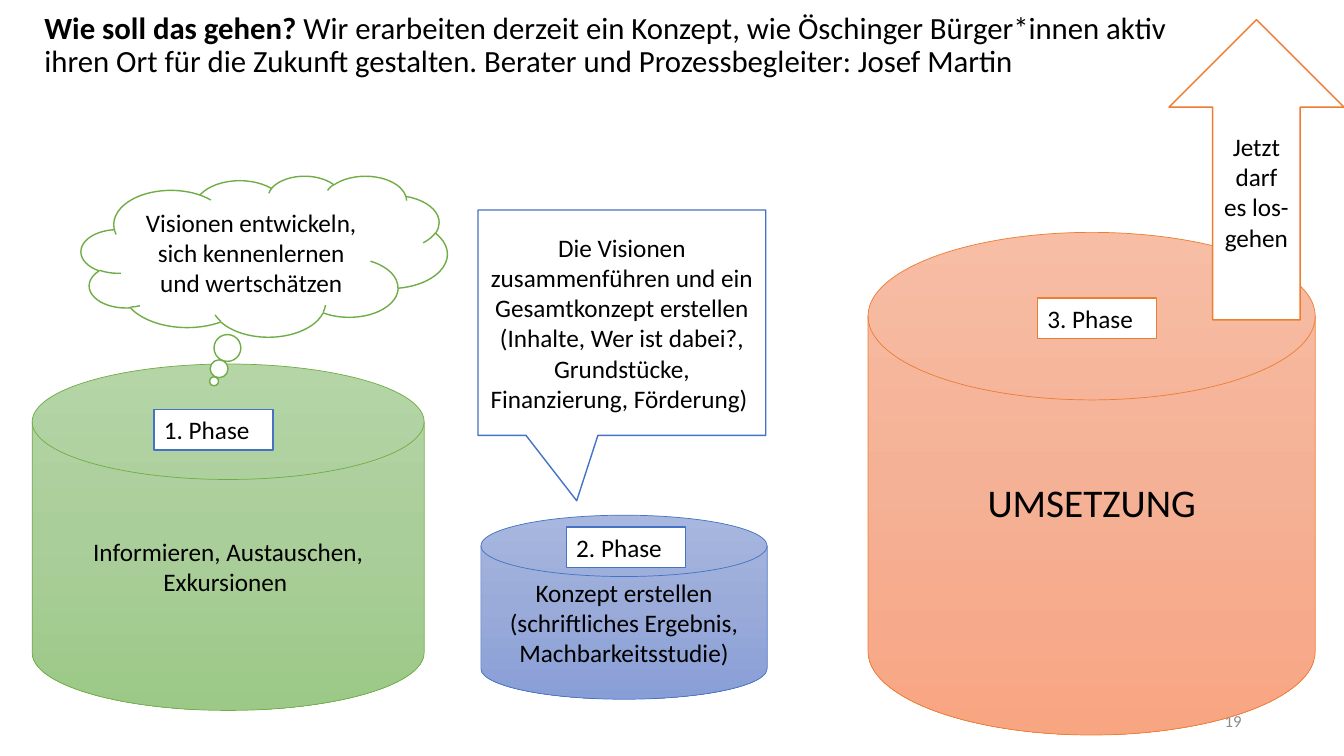
"""Build the slide showing the three phases of the village concept."""
from copy import deepcopy

from pptx import Presentation
from pptx.dml.color import RGBColor
from pptx.enum.shapes import MSO_SHAPE as SHAPE
from pptx.enum.text import MSO_ANCHOR as ANCHOR, MSO_AUTO_SIZE as AUTO_SIZE, PP_ALIGN as ALIGN
from pptx.oxml.ns import qn
from pptx.util import Pt

BLACK = RGBColor(0x00, 0x00, 0x00)
WHITE = RGBColor(0xFF, 0xFF, 0xFF)
GREY = RGBColor(0x8C, 0x8C, 0x8C)
GREEN = RGBColor(0x70, 0xAD, 0x47)
BLUE = RGBColor(0x44, 0x72, 0xC4)
ORANGE = RGBColor(0xED, 0x7D, 0x31)
GREENS = [RGBColor(0xB5, 0xD5, 0xA7), RGBColor(0xAA, 0xCE, 0x9A), RGBColor(0x9C, 0xC9, 0x87)]
BLUES = [RGBColor(0xA8, 0xB7, 0xDF), RGBColor(0x9A, 0xAB, 0xD9), RGBColor(0x88, 0x9E, 0xD7)]
ORANGES = [RGBColor(0xF7, 0xBD, 0xA5), RGBColor(0xF5, 0xB1, 0x96), RGBColor(0xF8, 0xA5, 0x82)]

prs = Presentation()
prs.slide_width, prs.slide_height = Pt(960), Pt(540)
slide = prs.slides.add_slide(prs.slide_layouts[5])


def write(frame, text, size, color=BLACK, align=ALIGN.CENTER, anchor=ANCHOR.MIDDLE):
    frame.word_wrap = True
    frame.vertical_anchor = anchor
    frame.text = text
    for paragraph in frame.paragraphs:
        paragraph.alignment = align
        paragraph.font.name = "Calibri"
        paragraph.font.size = Pt(size)
        paragraph.font.color.rgb = color


def add_outlined(kind, box, color, width):
    part = slide.shapes.add_shape(kind, *[Pt(length) for length in box])
    part.shadow.inherit = False
    part.fill.solid()
    part.fill.fore_color.rgb = WHITE
    part.line.color.rgb = color
    part.line.width = Pt(width)
    return part


heading = slide.shapes.title
heading.left, heading.top, heading.width, heading.height = Pt(24.5), Pt(0), Pt(828), Pt(104.4)
write(heading.text_frame, "", 22, align=ALIGN.LEFT, anchor=ANCHOR.TOP)
heading.text_frame.auto_size = AUTO_SIZE.NONE
heading.text_frame.margin_top = Pt(9)
statement = heading.text_frame.paragraphs[0]
statement.line_spacing = 0.9
question = statement.add_run()
question.text = "Wie soll das gehen? "
question.font.bold = True
answer = statement.add_run()
answer.text = ("Wir erarbeiten derzeit ein Konzept, wie Öschinger Bürger*innen aktiv ihren Ort "
               "für die Zukunft gestalten. Berater und Prozessbegleiter: Josef Martin")

page_number = slide.shapes.add_textbox(Pt(678), Pt(500.5), Pt(216), Pt(28.75))
write(page_number.text_frame, "19", 12, GREY, ALIGN.RIGHT)

drums = [
    ((23, 260, 280, 247.5), GREEN, GREENS, "Informieren, Austauschen, Exkursionen ", 18),
    ((343.5, 368, 204.5, 131.5), BLUE, BLUES,
     "Konzept erstellen\n(schriftliches Ergebnis, Machbarkeitsstudie)", 18),
    ((620, 166, 319.5, 359), ORANGE, ORANGES, "UMSETZUNG\n", 28),
]
for box, color, shades, text, size in drums:
    drum = add_outlined(SHAPE.FLOWCHART_MAGNETIC_DISK, box, color, 0.5)
    drum.fill.gradient()
    drum.fill.gradient_angle = 270
    stop_list = drum._element.spPr.find(qn("a:gradFill")).find(qn("a:gsLst"))
    stop_list.insert(1, deepcopy(stop_list[0]))
    for stop, shade, position in zip(drum.fill.gradient_stops, shades, (0, 0.5, 1)):
        stop.color.rgb = shade
        stop.position = position
    write(drum.text_frame, text, size)

phases = [(110, 292.5, BLUE), (404.5, 376.5, BLUE), (741, 213, ORANGE)]
for number, (left, top, color) in enumerate(phases, 1):
    phase = add_outlined(SHAPE.RECTANGLE, (left, top, 85, 29), color, 1)
    write(phase.text_frame, f"{number}. Phase", 18, align=ALIGN.LEFT, anchor=ANCHOR.TOP)
    phase.text_frame.auto_size = AUTO_SIZE.SHAPE_TO_FIT_TEXT

remarks = [
    (SHAPE.CLOUD_CALLOUT, (58, 125.5, 261.5, 115), GREEN, (-0.137, 0.777),
     "Visionen entwickeln, sich kennenlernen und wertschätzen"),
    (SHAPE.RECTANGULAR_CALLOUT, (341.5, 150, 205.5, 161), BLUE, (-0.157, 0.79),
     "Die Visionen zusammenführen und ein Gesamtkonzept erstellen\n"
     "(Inhalte, Wer ist dabei?, Grundstücke, Finanzierung, Förderung) "),
    (SHAPE.UP_ARROW, (835, 14, 125, 214.5), ORANGE, (), "Jetzt darf es los-gehen"),
]
for kind, box, color, tip, text in remarks:
    remark = add_outlined(kind, box, color, 1)
    for index, offset in enumerate(tip):
        remark.adjustments[index] = offset
    write(remark.text_frame, text, 18)

prs.save("out.pptx")
